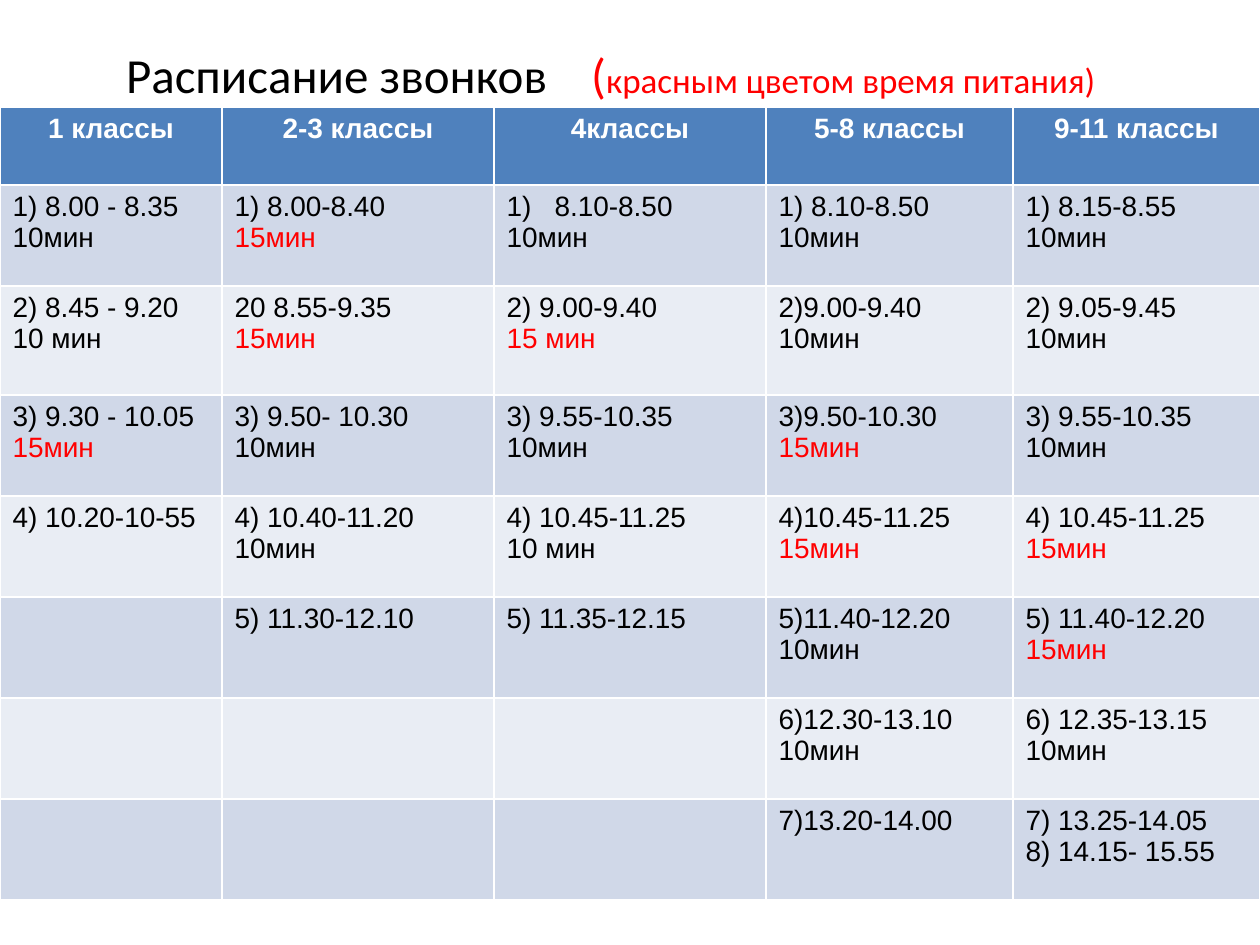
from pptx import Presentation
from pptx.dml.color import RGBColor
from pptx.enum.text import PP_ALIGN
from pptx.util import Pt
from lxml import etree

PX = 914400 / 126
CENTER, LEFT = PP_ALIGN.CENTER, PP_ALIGN.LEFT
NS = "http://schemas.openxmlformats.org/drawingml/2006/main"
BLACK, WHITE, RED = "000000", "FFFFFF", "FF0000"
HEAD, DARK, LIGHT = "4F81BD", "D0D8E8", "E9EDF4"


def px(n):
    return int(n * PX)


def put(par, text, size=16, font="Arial", color=BLACK, bold=False, align=LEFT, gap=0):
    par.alignment = align
    run = par.add_run()
    run.text = text
    run.font.size = Pt(size)
    run.font.name = font
    run.font.bold = bold
    run.font.color.rgb = RGBColor.from_string(color)
    if gap:
        run.font._element.set("spc", str(gap * 100))


heads = ["1 классы", "2-3 классы", "4классы", "5-8 классы", "9-11 классы"]
rows = [
    ["1) 8.00 - 8.35\n10мин", "1) 8.00-8.40\n*15мин", "#8.10-8.50\n10мин",
     "1) 8.10-8.50\n10мин", "1) 8.15-8.55\n10мин"],
    ["2) 8.45 - 9.20\n10 мин", "20 8.55-9.35\n*15мин", "2) 9.00-9.40\n*15 мин",
     "2)9.00-9.40\n10мин", "2) 9.05-9.45\n10мин"],
    ["3) 9.30 - 10.05\n*15мин", "3) 9.50- 10.30\n10мин", "3) 9.55-10.35\n10мин",
     "3)9.50-10.30\n*15мин", "3) 9.55-10.35\n10мин"],
    ["4) 10.20-10-55", "4) 10.40-11.20\n10мин", "4) 10.45-11.25\n10 мин",
     "4)10.45-11.25\n*15мин", "4) 10.45-11.25\n*15мин"],
    ["", "5) 11.30-12.10", "5) 11.35-12.15",
     "5)11.40-12.20\n10мин", "5) 11.40-12.20\n*15мин"],
    ["", "", "", "6)12.30-13.10\n10мин", "6) 12.35-13.15\n10мин"],
    ["", "", "", "7)13.20-14.00", "7) 13.25-14.05\n8) 14.15- 15.55"],
]
wides = [222, 272, 272, 247, 247]
highs = [78, 101, 109, 101, 101, 101, 101, 101]

deck = Presentation()
deck.slide_width, deck.slide_height = px(1260), px(945)
slide = deck.slides.add_slide(deck.slide_layouts[6])

grid = slide.shapes.add_table(
    len(highs), len(wides), 0, px(107), px(sum(wides)), px(sum(highs))).table
for col, wide in zip(grid.columns, wides):
    col.width = px(wide)
for row, high in zip(grid.rows, highs):
    row.height = px(high)

for r, texts in enumerate([heads] + rows):
    for c, text in enumerate(texts):
        cell = grid.cell(r, c)
        cell.fill.solid()
        shade = HEAD if r == 0 else DARK if r % 2 else LIGHT
        cell.fill.fore_color.rgb = RGBColor.from_string(shade)
        frame = cell.text_frame
        for i, line in enumerate(text.split("\n") if text else []):
            par = frame.add_paragraph() if i else frame.paragraphs[0]
            if r == 0:
                put(par, line, color=WHITE, bold=True, align=CENTER)
                continue
            if line.startswith("#"):
                props = par._p.get_or_add_pPr()
                props.set("marL", str(px(48)))
                props.set("indent", str(px(-48)))
                mark = etree.SubElement(props, f"{{{NS}}}buAutoNum")
                mark.set("type", "arabicParenR")
            put(par, line.lstrip("*#"), color=RED if line.startswith("*") else BLACK)

box = slide.shapes.add_textbox(px(25), px(38), px(1172), px(58))
box.text_frame.word_wrap = True
title = box.text_frame.paragraphs[0]
look = {"font": "Calibri", "align": CENTER}
put(title, "Расписание звонков", size=28, **look)
put(title, " ", size=28, gap=19, **look)
put(title, "(", size=28, color=RED, **look)
put(title, "красным цветом время питания)", size=20, color=RED, **look)

deck.save("out.pptx")
